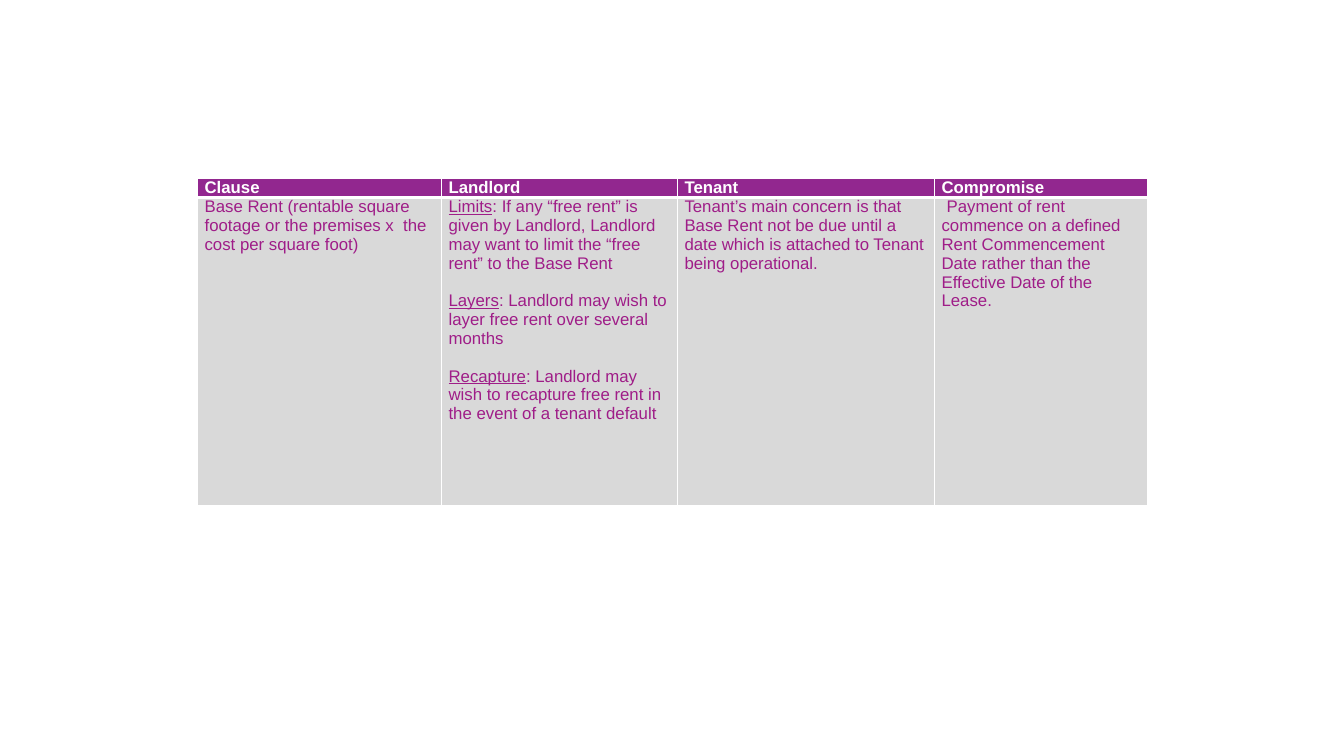
import pptx
import pptx.dml.color
import pptx.oxml
import pptx.oxml.ns
import pptx.util

PX = 9144  # 100 px to the inch
COLORS = {"header": "92278F", "body": "D9D9D9", "text": "9F1D88", "white": "FFFFFF"}
FONT = "Arial"
SIZE = 12
LINE_GAP = 13.4  # one line of text, in points
LEFT, TOP = 196, 177
COL_WIDTHS = [242, 234, 255, 211]
ROW_HEIGHTS = [19, 306]

HEADERS = ["Clause", "Landlord", "Tenant", "Compromise"]
BASE_RENT = "Base Rent (rentable square footage or the premises x  the cost per square foot)"
LANDLORD = [
    ("Limits", ": If any “free rent” is given by Landlord, Landlord may want to limit "
               "the “free rent” to the Base Rent"),
    ("Layers", ": Landlord may wish to layer free rent over several months"),
    ("Recapture", ": Landlord may wish to recapture free rent in the event of a tenant default"),
]
TENANT = ("Tenant’s main concern is that Base Rent not be due until a date which is "
          "attached to Tenant being operational.")
COMPROMISE = ("Payment of rent commence on a defined Rent Commencement Date rather than "
              "the Effective Date of the Lease.")


def px(n):
    return pptx.util.Emu(n * PX)


def rgb(name):
    return pptx.dml.color.RGBColor.from_string(COLORS[name])


def add_run(p, text, color="text", bold=False, underline=False):
    r = p.add_run()
    r.text = text
    r.font.name = FONT
    r.font.size = pptx.util.Pt(SIZE)
    r.font.bold = bold
    r.font.underline = underline
    r.font.color.rgb = rgb(color)


def set_borders(cell, top, bottom):
    tcPr = cell._tc.get_or_add_tcPr()
    widths = {"lnL": 1, "lnR": 1, "lnT": top, "lnB": bottom}
    for i, (tag, width) in enumerate(widths.items()):
        tcPr.insert(i, pptx.oxml.parse_xml(
            f'<a:{tag} {pptx.oxml.ns.nsdecls("a")} w="{pptx.util.Pt(width)}">'
            f'<a:solidFill><a:srgbClr val="{COLORS["white"]}"/></a:solidFill></a:{tag}>'))


def format_cell(cell, fill, top, bottom):
    cell.margin_left = cell.margin_right = px(7)
    cell.margin_top = cell.margin_bottom = 0
    cell.fill.solid()
    cell.fill.fore_color.rgb = rgb(fill)
    set_borders(cell, top, bottom)


def add_clause_table(s):
    shape = s.shapes.add_table(len(ROW_HEIGHTS), len(COL_WIDTHS), px(LEFT), px(TOP),
                               px(sum(COL_WIDTHS)), px(sum(ROW_HEIGHTS)))
    table = shape.table
    table.horz_banding = False
    for col, width in zip(table.columns, COL_WIDTHS):
        col.width = px(width)
    for row, height in zip(table.rows, ROW_HEIGHTS):
        row.height = px(height)
    return table


def main():
    prs = pptx.Presentation()
    prs.slide_width, prs.slide_height = px(1333), px(750)
    s = prs.slides.add_slide(prs.slide_layouts[6])
    table = add_clause_table(s)

    # Header row
    for i, header in enumerate(HEADERS):
        cell = table.cell(0, i)
        format_cell(cell, "header", top=1, bottom=3)
        add_run(cell.text_frame.paragraphs[0], header, color="white", bold=True)

    # Body row
    for i in range(len(HEADERS)):
        format_cell(table.cell(1, i), "body", top=3, bottom=1)
    for i, text in {0: BASE_RENT, 2: TENANT, 3: COMPROMISE}.items():
        add_run(table.cell(1, i).text_frame.paragraphs[0], text)

    # First line of the compromise is slightly indented
    p = table.cell(1, 3).text_frame.paragraphs[0]
    p._p.get_or_add_pPr().set("indent", str(px(5)))

    # Landlord's points, one blank line's height apart
    tf = table.cell(1, 1).text_frame
    for i, (term, text) in enumerate(LANDLORD):
        p = tf.add_paragraph() if i else tf.paragraphs[0]
        if i:
            p.space_before = pptx.util.Pt(LINE_GAP)
        add_run(p, term, underline=True)
        add_run(p, text)

    prs.save("out.pptx")


if __name__ == "__main__":
    main()
